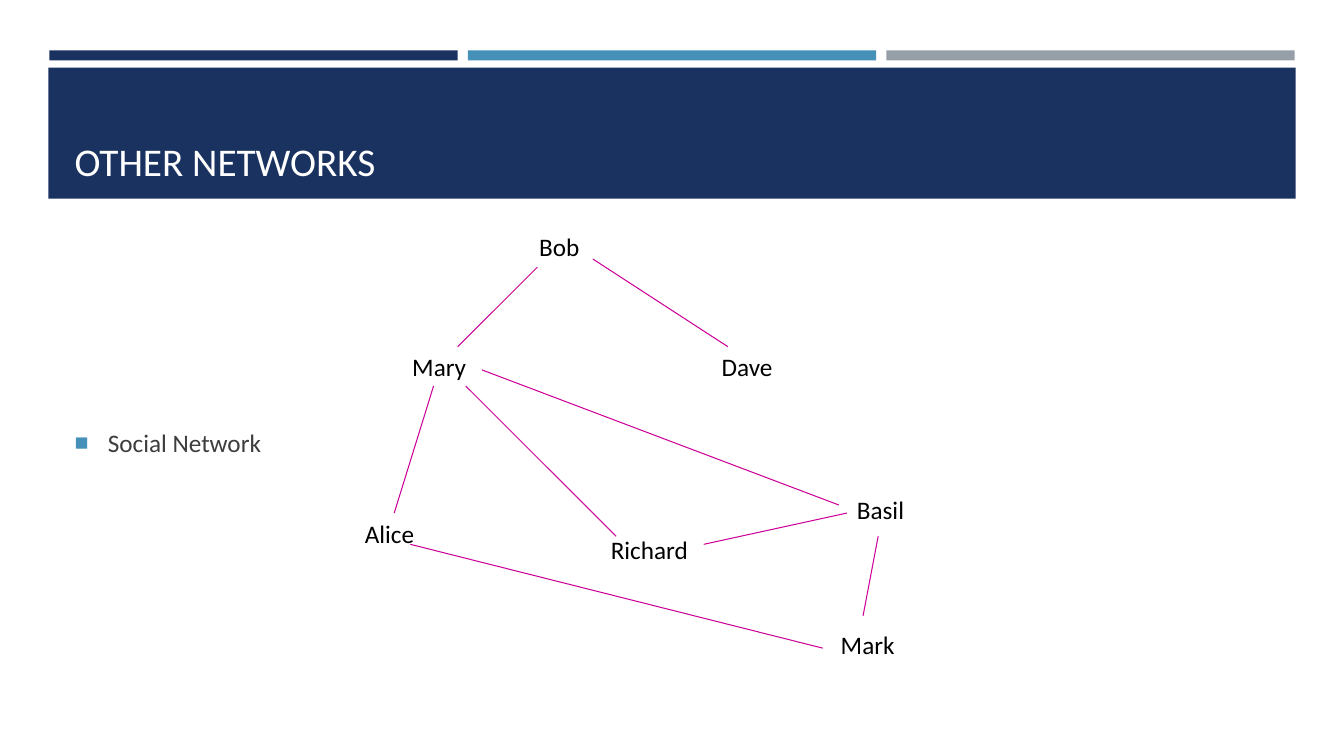
from lxml.etree import SubElement
from pptx import Presentation
from pptx.dml.color import RGBColor
from pptx.enum.shapes import MSO_CONNECTOR, MSO_SHAPE
from pptx.enum.text import MSO_ANCHOR, MSO_AUTO_SIZE, PP_ALIGN
from pptx.oxml.ns import qn
from pptx.util import Inches, Pt

COLORS = {
    "navy": "1A3260",
    "blue": "4590B8",
    "gray": "969FA7",
    "link": "CC0099",
    "name": "000000",
    "title": "FFFFFF",
    "body": "3D3D3D",
}


class SlideBuilder:
    font = "Calibri"

    def __init__(self, prs):
        self.s = prs.slides.add_slide(prs.slide_layouts[1])

    def color(self, key):
        return RGBColor.from_string(COLORS[key])

    def run(self, p, text, size, color):
        r = p.add_run()
        r.text = text
        r.font.name = self.font
        r.font.size = Pt(size)
        r.font.color.rgb = self.color(color)

    def bar(self, x, y, w, h, color):
        sp = self.s.shapes.add_shape(
            MSO_SHAPE.RECTANGLE, Inches(x), Inches(y), Inches(w), Inches(h))
        sp.shadow.inherit = False
        sp.fill.solid()
        sp.fill.fore_color.rgb = self.color(color)
        sp.line.fill.background()

    def label(self, text, x, y, w):
        sp = self.s.shapes.add_textbox(Inches(x), Inches(y), Inches(w), Inches(0.4))
        tf = sp.text_frame
        tf.word_wrap = True
        tf.auto_size = MSO_AUTO_SIZE.SHAPE_TO_FIT_TEXT
        self.run(tf.paragraphs[0], text, 18, "name")

    def link(self, x1, y1, x2, y2):
        c = self.s.shapes.add_connector(
            MSO_CONNECTOR.STRAIGHT, Inches(x1), Inches(y1), Inches(x2), Inches(y2))
        c.line.color.rgb = self.color("link")
        c.line.width = Pt(0.75)
        SubElement(c._element.spPr, qn("a:effectLst"))

    def placeholder(self, idx, x, y, w, h, anchor):
        sp = self.s.placeholders[idx]
        sp.left, sp.top, sp.width, sp.height = (Inches(v) for v in (x, y, w, h))
        self.s.shapes._spTree.append(sp._element)
        tf = sp.text_frame
        tf.word_wrap = True
        tf.auto_size = MSO_AUTO_SIZE.NONE
        tf.vertical_anchor = anchor
        p = tf.paragraphs[0]
        p.alignment = PP_ALIGN.LEFT
        return p

    def title(self, text):
        p = self.placeholder(0, 0.64, 0.77, 12.06, 1.11, MSO_ANCHOR.BOTTOM)
        self.run(p, text, 28, "title")

    def body(self, text):
        p = self.placeholder(1, 0.64, 2.38, 12.06, 4.02, MSO_ANCHOR.MIDDLE)
        p.space_before = Pt(4)
        p.space_after = Pt(6)
        pPr = p._p.get_or_add_pPr()
        pPr.set("marL", str(Inches(0.33)))
        pPr.set("indent", str(Inches(-0.33)))
        buClr = SubElement(pPr, qn("a:buClr"))
        SubElement(buClr, qn("a:srgbClr"), val=COLORS["blue"])
        SubElement(pPr, qn("a:buSzPct"), val="92000")
        SubElement(pPr, qn("a:buChar"), char="■")
        self.run(p, text, 18, "body")


def main():
    prs = Presentation()
    prs.slide_width = Inches(13.33)
    prs.slide_height = Inches(7.5)
    b = SlideBuilder(prs)

    for i, color in enumerate(("navy", "blue", "gray")):
        b.bar(0.49 + i * 4.15, 0.5, 4.05, 0.1, color)
    b.bar(0.48, 0.67, 12.37, 1.3, "navy")

    people = [
        ("Bob", 5.25, 2.25, 0.94),
        ("Mary", 3.99, 3.44, 1.81),
        ("Dave", 7.06, 3.44, 1.34),
        ("Alice", 3.52, 5.09, 1.34),
        ("Richard", 5.96, 5.25, 1.34),
        ("Basil", 8.4, 4.85, 2.05),
        ("Mark", 8.24, 6.19, 1.81),
    ]
    for person in people:
        b.label(*person)

    friendships = [
        (5.33, 2.65, 4.54, 3.44),
        (5.88, 2.57, 7.22, 3.44),
        (4.3, 3.83, 3.91, 5.09),
        (4.62, 3.83, 6.11, 5.32),
        (4.78, 3.67, 8.32, 5.01),
        (6.98, 5.4, 8.4, 5.09),
        (8.71, 5.32, 8.56, 6.11),
        (4.07, 5.4, 8.16, 6.43),
    ]
    for friendship in friendships:
        b.link(*friendship)

    b.title("OTHER NETWORKS")
    b.body("Social Network")
    prs.save("out.pptx")


if __name__ == "__main__":
    main()
